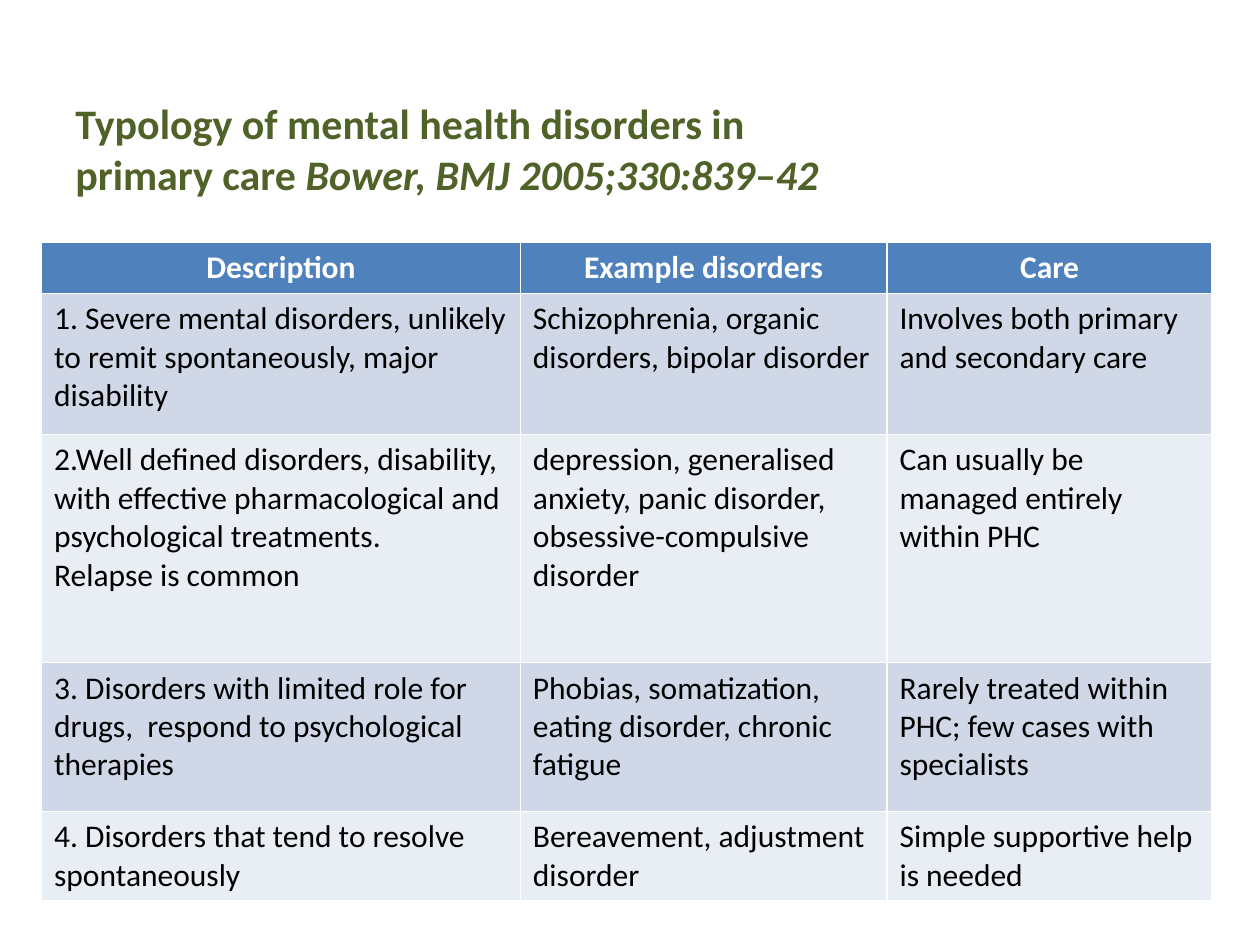
from pptx import Presentation
from pptx.dml.color import RGBColor
from pptx.enum.text import MSO_ANCHOR, PP_ALIGN
from pptx.util import Inches, Pt

FONT = "Calibri"
COLORS = {
    "title": "4F6228",
    "header": "4F81BD",
    "header_text": "FFFFFF",
    "odd_row": "D0D8E8",
    "even_row": "E9EDF4",
    "body_text": "000000",
}

TITLE = "Typology of mental health disorders in primary care "
CITATION = "Bower, BMJ 2005;330:839–42"

# Each line break in a cell starts a new paragraph
ROWS = [
    ("Description", "Example disorders", "Care"),
    (
        "1. Severe mental disorders, unlikely to remit spontaneously, major disability",
        "Schizophrenia, organic disorders, bipolar disorder",
        "Involves both primary and secondary care",
    ),
    (
        "2.Well defined disorders, disability, with effective pharmacological and "
        "psychological treatments.\nRelapse is common",
        "depression, generalised\nanxiety, panic disorder, obsessive-compulsive\ndisorder",
        "Can usually be managed entirely within PHC",
    ),
    (
        "3. Disorders with limited role for drugs,  respond to psychological therapies",
        "Phobias, somatization,\neating disorder, chronic fatigue",
        "Rarely treated within PHC; few cases with specialists",
    ),
    (
        "4. Disorders that tend to resolve spontaneously",
        "Bereavement, adjustment disorder",
        "Simple supportive help is needed",
    ),
]
COLUMN_WIDTHS = [3.8, 2.91, 2.58]
ROW_HEIGHTS = [0.41, 1.12, 1.81, 1.18, 0.71]


def color(name):
    return RGBColor.from_string(COLORS[name])


def style_paragraph(paragraph, size, color_name, bold):
    font = paragraph.font
    font.name, font.size, font.bold = FONT, Pt(size), bold
    font.color.rgb = color(color_name)


def add_title(slide):
    box = slide.shapes.add_textbox(Inches(0.5), Inches(0.55), Inches(6.67), Inches(1.25))
    frame = box.text_frame
    frame.word_wrap = True
    frame.vertical_anchor = MSO_ANCHOR.MIDDLE
    paragraph = frame.paragraphs[0]
    paragraph.add_run().text = TITLE
    citation = paragraph.add_run()
    citation.text = CITATION
    citation.font.italic = True
    style_paragraph(paragraph, 24, "title", True)


def add_disorder_table(slide):
    # The default table style supplies the white cell borders
    table = slide.shapes.add_table(
        len(ROWS), len(COLUMN_WIDTHS), Inches(0.33), Inches(1.92),
        Inches(sum(COLUMN_WIDTHS)), Inches(sum(ROW_HEIGHTS)),
    ).table
    for column, width in zip(table.columns, COLUMN_WIDTHS):
        column.width = Inches(width)

    for index, (row, height, texts) in enumerate(zip(table.rows, ROW_HEIGHTS, ROWS)):
        row.height = Inches(height)
        is_header = index == 0
        band = "odd_row" if index % 2 else "even_row"
        for cell, text in zip(row.cells, texts):
            cell.fill.solid()
            cell.fill.fore_color.rgb = color("header" if is_header else band)
            cell.text = text
            for paragraph in cell.text_frame.paragraphs:
                paragraph.alignment = PP_ALIGN.CENTER if is_header else PP_ALIGN.LEFT
                style_paragraph(
                    paragraph, 18, "header_text" if is_header else "body_text", is_header
                )


def main():
    presentation = Presentation()
    presentation.slide_width = Inches(10)
    presentation.slide_height = Inches(7.5)
    slide = presentation.slides.add_slide(presentation.slide_layouts[6])
    add_title(slide)
    add_disorder_table(slide)
    presentation.save("out.pptx")


if __name__ == "__main__":
    main()
